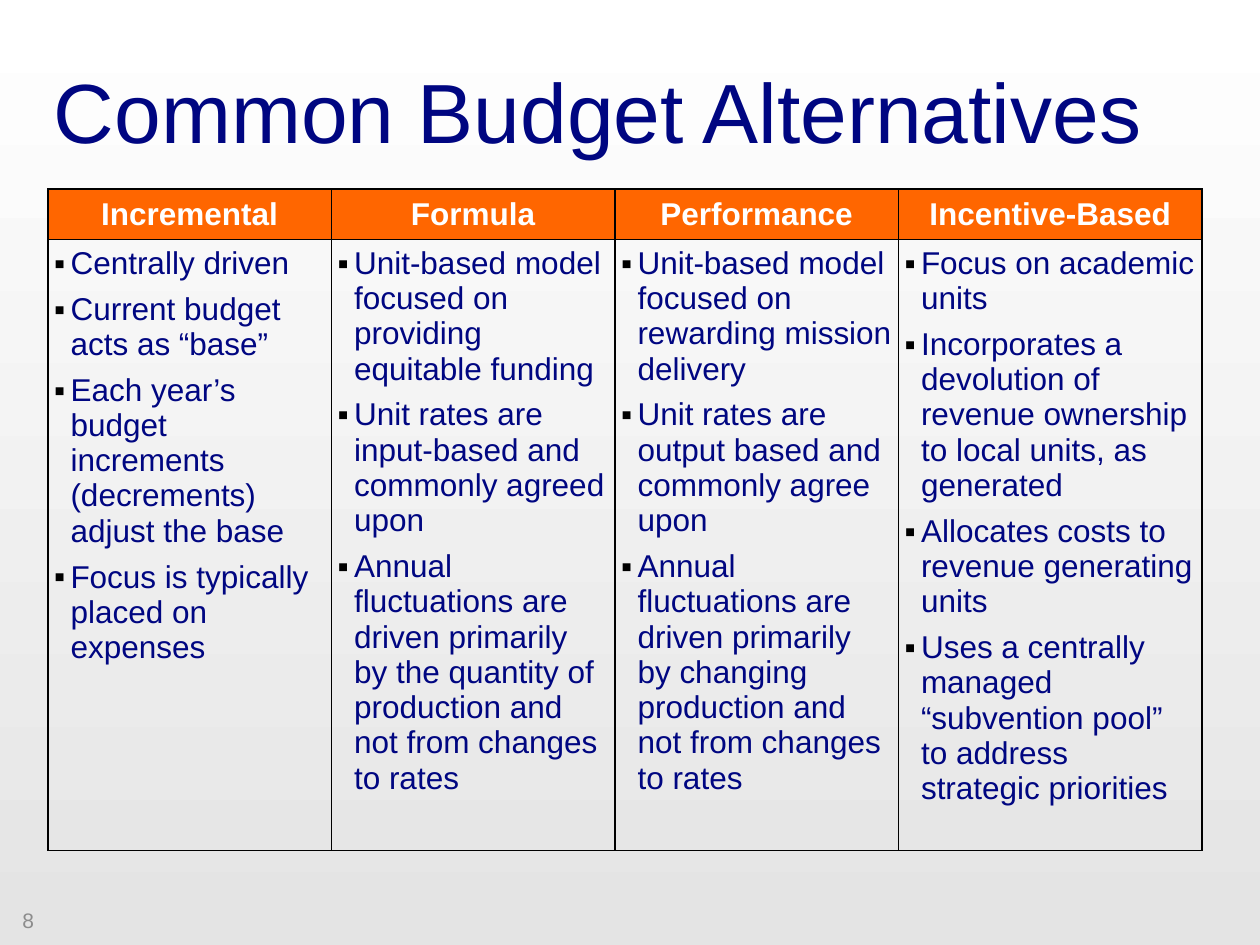
from lxml import etree
from pptx import Presentation
from pptx.dml.color import RGBColor
from pptx.enum import text
from pptx.oxml import ns
from pptx.util import Inches, Pt

NAVY, ORANGE, WHITE, BLACK, GRAY = "000681", "FF6600", "FFFFFF", "000000", "8C8C8C"
TITLE = "Common Budget Alternatives"
PAGE_NUMBER = "8"
MODELS = [
    ("Incremental", 2.25, [
        "Centrally driven",
        "Current budget acts as “base”",
        "Each year’s budget increments (decrements) adjust the base",
        "Focus is typically placed on expenses",
    ]),
    ("Formula", 2.25, [
        "Unit-based model focused on providing equitable funding",
        "Unit rates are input-based and commonly agreed upon",
        "Annual fluctuations are driven primarily by the quantity of "
        "production and not from changes to rates",
    ]),
    ("Performance", 2.25, [
        "Unit-based model focused on rewarding mission delivery",
        "Unit rates are output based and commonly agree upon",
        "Annual fluctuations are driven primarily by changing "
        "production and not from changes to rates",
    ]),
    ("Incentive-Based", 2.41, [
        "Focus on academic units",
        "Incorporates a devolution of revenue ownership to local units, as generated",
        "Allocates costs to revenue generating units",
        "Uses a centrally managed “subvention pool” to address strategic priorities",
    ]),
]
ROW_HEIGHTS = [0.38, 4.55]


def color(value):
    return RGBColor.from_string(value)


def style(para, size, hue, bold=False):
    for span in para.runs:
        span.font.name = "Arial"
        span.font.size = Pt(size)
        span.font.bold = bold
        span.font.color.rgb = color(hue)


def add_element(parent, tag, **attributes):
    return etree.SubElement(parent, ns.qn(tag), attributes)


def add_solid(parent, hue):
    add_element(add_element(parent, "a:solidFill"), "a:srgbClr", val=hue)


def add_label(page, place, words, size, hue):
    box = page.shapes.add_textbox(*map(Inches, place))
    frame = box.text_frame
    frame.word_wrap = True
    frame.vertical_anchor = text.MSO_ANCHOR.MIDDLE
    frame.text = words
    style(frame.paragraphs[0], size, hue)


def frame_cell(cell, fill=None):
    """Draw the four borders, then set the fill (None leaves the cell clear)."""
    properties = cell._tc.get_or_add_tcPr()
    for side in ("a:lnL", "a:lnR", "a:lnT", "a:lnB"):
        add_solid(add_element(properties, side, w=str(Pt(1))), BLACK)
    if fill:
        cell.fill.solid()
        cell.fill.fore_color.rgb = color(fill)
    else:
        cell.fill.background()


def add_bullet(para):
    properties = para._p.get_or_add_pPr()
    properties.set("marL", str(Inches(0.13)))
    properties.set("indent", str(-Inches(0.13)))
    add_element(add_element(properties, "a:buClr"), "a:srgbClr", val=BLACK)
    add_element(properties, "a:buFont", typeface="Arial")
    add_element(properties, "a:buChar", char="▪")


def fill_header(cell, words):
    frame_cell(cell, ORANGE)
    cell.vertical_anchor = text.MSO_ANCHOR.MIDDLE
    cell.text_frame.text = words
    para = cell.text_frame.paragraphs[0]
    para.alignment = text.PP_ALIGN.CENTER
    style(para, 18, WHITE, bold=True)


def fill_points(cell, points):
    frame_cell(cell)
    cell.margin_left = cell.margin_right = Inches(0.05)
    cell.margin_top = cell.margin_bottom = Inches(0.05)
    frame = cell.text_frame
    frame.text = "\n".join(points)
    for index, para in enumerate(frame.paragraphs):
        add_bullet(para)
        para.space_before = Pt(3 if index else 0)
        para.space_after = Pt(3)
        style(para, 18, NAVY)


def add_models(page):
    widths = [width for _, width, _ in MODELS]
    holder = page.shapes.add_table(
        len(ROW_HEIGHTS), len(MODELS), Inches(0.38), Inches(1.5),
        Inches(sum(widths)), Inches(sum(ROW_HEIGHTS)))
    table = holder.table
    table.horz_banding = False
    for row, height in zip(table.rows, ROW_HEIGHTS):
        row.height = Inches(height)
    for index, (name, width, points) in enumerate(MODELS):
        table.columns[index].width = Inches(width)
        fill_header(table.cell(0, index), name)
        fill_points(table.cell(1, index), points)


def main():
    deck = Presentation()
    deck.slide_width, deck.slide_height = Inches(10), Inches(7.5)
    page = deck.slides.add_slide(deck.slide_layouts[6])
    backdrop = page.background.fill
    backdrop.gradient()
    backdrop.gradient_angle = 270
    for stop, hue in zip(backdrop.gradient_stops, (WHITE, "E4E4E4")):
        stop.color.rgb = color(hue)
    add_label(page, (0.33, 0.25, 9.34, 1.25), TITLE, 48, NAVY)
    add_models(page)
    add_label(page, (0.08, 7.1, 2.33, 0.4), PAGE_NUMBER, 12, GRAY)
    deck.save("out.pptx")


if __name__ == "__main__":
    main()
